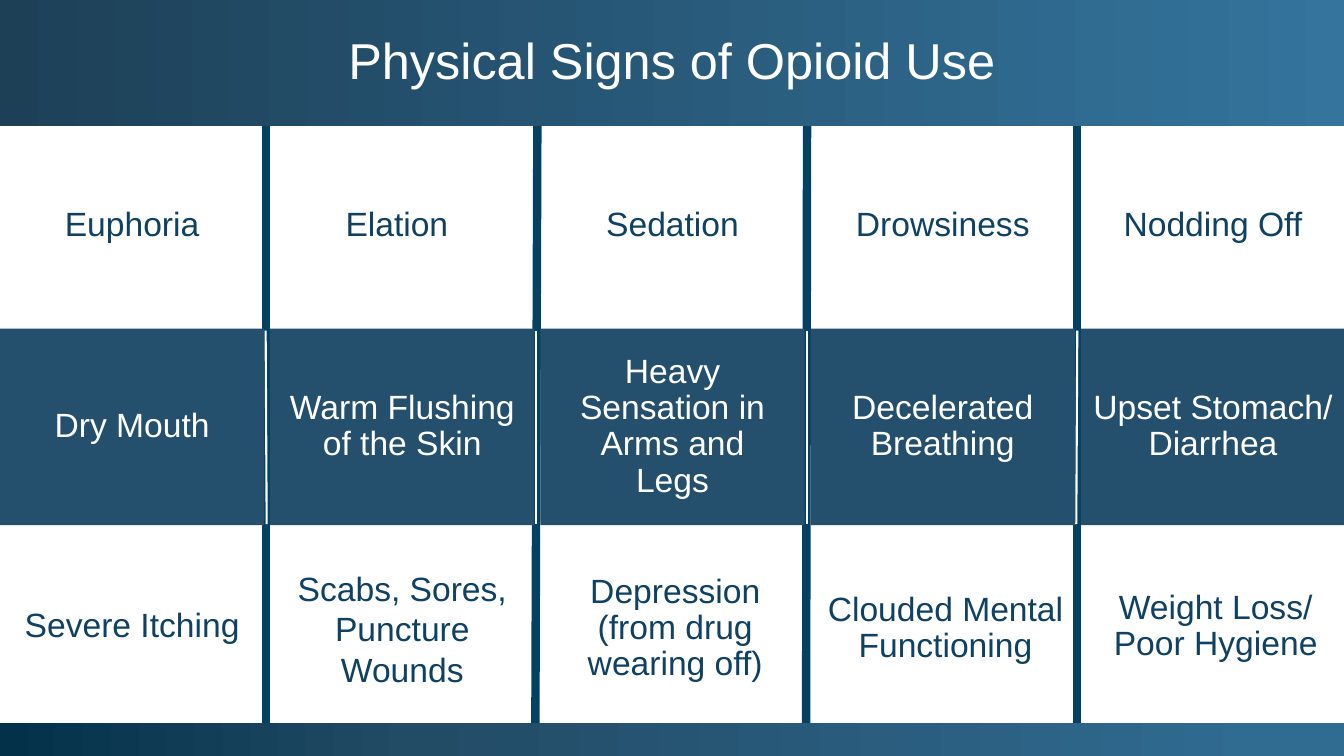
from copy import deepcopy
from dataclasses import dataclass

from pptx import Presentation
from pptx.dml.color import RGBColor
from pptx.enum.shapes import MSO_CONNECTOR, MSO_SHAPE
from pptx.enum.text import MSO_ANCHOR, PP_ALIGN
from pptx.oxml.ns import qn
from pptx.util import Inches, Pt

RECT = MSO_SHAPE.RECTANGLE
LINE = MSO_CONNECTOR.STRAIGHT
MID = MSO_ANCHOR.MIDDLE
CENTER = PP_ALIGN.CENTER

WIDE, HIGH = 13.33, 7.5
COL, ROW, TOP = 2.68, 2.0, 1.26
CELL_W, CELL_H = 2.62, 1.95


@dataclass(frozen=True)
class Theme:
    font: str = "Arial"
    head: int = 36
    body: int = 24
    white: str = "FFFFFF"
    ink: str = "0F4162"
    rule: str = "054163"
    band: str = "24506D"
    top: tuple = ((0, "1D4057"), (1, "34749D"))
    foot: tuple = ((0, "04314A"), (0.31, "224B66"), (0.94, "306B91"))


def col(n):
    return n * COL


def row(n):
    return TOP + n * ROW


def rgb(code):
    return RGBColor.from_string(code)


def write(shape, text, *, size, color, font, pad=0.1, lead=0.9):
    """Fill the shape with centred text, one paragraph per line."""
    frame = shape.text_frame
    frame.word_wrap = True
    frame.vertical_anchor = MID
    frame.margin_left = frame.margin_right = Inches(pad)
    frame.text = text
    for para in frame.paragraphs:
        para.alignment = CENTER
        para.line_spacing = lead
        para.font.size = Pt(size)
        para.font.name = font
        para.font.color.rgb = rgb(color)


class Board:
    def __init__(self, slide, theme):
        self.shapes = slide.shapes
        self.theme = theme

    def block(self, x, y, w, h):
        box = self.shapes.add_shape(RECT, *map(Inches, (x, y, w, h)))
        box.shadow.inherit = False
        box.line.fill.background()
        return box

    def bar(self, y, h, stops):
        """Add a full-width bar shaded from left to right; y and h are shares."""
        bar = self.block(0, y * HIGH, WIDE, h * HIGH)
        bar.fill.gradient()
        bar.fill.gradient_angle = 0
        marks = next(bar._element.iter(qn("a:gsLst")))
        for _ in stops[2:]:
            marks.append(deepcopy(marks[-1]))
        for mark, (place, color) in zip(bar.fill.gradient_stops, stops):
            mark.position = place
            mark.color.rgb = rgb(color)
        return bar

    def title(self, text):
        bar = self.bar(0, 1 / 6, self.theme.top)
        write(bar, text, size=self.theme.head, color=self.theme.white,
              font=self.theme.font)

    def cell(self, c, r, text, dark=False, **style):
        box = self.block(col(c), row(r), CELL_W, CELL_H)
        if dark:
            box.fill.solid()
            box.fill.fore_color.rgb = rgb(self.theme.band)
        else:
            box.fill.background()
        color = self.theme.white if dark else self.theme.ink
        write(box, text, size=self.theme.body, color=color,
              font=self.theme.font, **style)

    def rules(self, first, last, color, width, leans):
        """Draw one line per column gap, each leaning left by its own amount."""
        for n, lean in enumerate(leans, 1):
            x = col(n) - 0.04
            ends = (x + lean / 2, row(first), x - lean / 2, row(last))
            line = self.shapes.add_connector(LINE, *map(Inches, ends))
            line.line.color.rgb = rgb(color)
            line.line.width = Pt(width)
            props = line._element.spPr
            props.append(props.makeelement(qn("a:effectLst"), {}))


# Each sign: column, row, text, format
SIGNS = (
    (0, 0, "Euphoria", {}),
    (0.98, 0, "Elation", {}),
    (2, 0, "Sedation", {"pad": 0.2}),
    (3, 0, "Drowsiness", {}),
    (4, 0, "Nodding Off", {}),
    (0, 1, "Dry Mouth", {}),
    (1, 1, "Warm Flushing of the Skin", {}),
    (2, 1, "Heavy Sensation in Arms and Legs", {"pad": 0.2}),
    (3, 1, "Decelerated Breathing", {}),
    (4, 1, "Upset Stomach/\nDiarrhea", {"pad": 0}),
    (0, 1.99, "Severe Itching", {}),
    (1, 2, "Scabs, Sores, Puncture Wounds", {"lead": 1.0}),
    (2.01, 2, "Depression (from drug wearing off)", {}),
    (3.01, 2, "Clouded Mental Functioning", {}),
    (4.01, 1.99, "Weight Loss/\nPoor Hygiene", {}),
)


def main():
    deck = Presentation()
    deck.slide_width, deck.slide_height = Inches(WIDE), Inches(HIGH)
    theme = Theme()
    board = Board(deck.slides.add_slide(deck.slide_layouts[6]), theme)
    board.rules(-0.07, 2.96, theme.rule, 6, (0, 0.02, 0.01, 0))
    board.title("Physical Signs of Opioid Use")
    for c, r, text, style in SIGNS:
        board.cell(c, r, text, dark=r == 1, **style)
    board.bar(0.956, 0.044, theme.foot)
    board.rules(1.01, 1.97, theme.white, 1.5, (-0.01, 0, 0, 0.01))
    deck.save("out.pptx")


if __name__ == "__main__":
    main()
